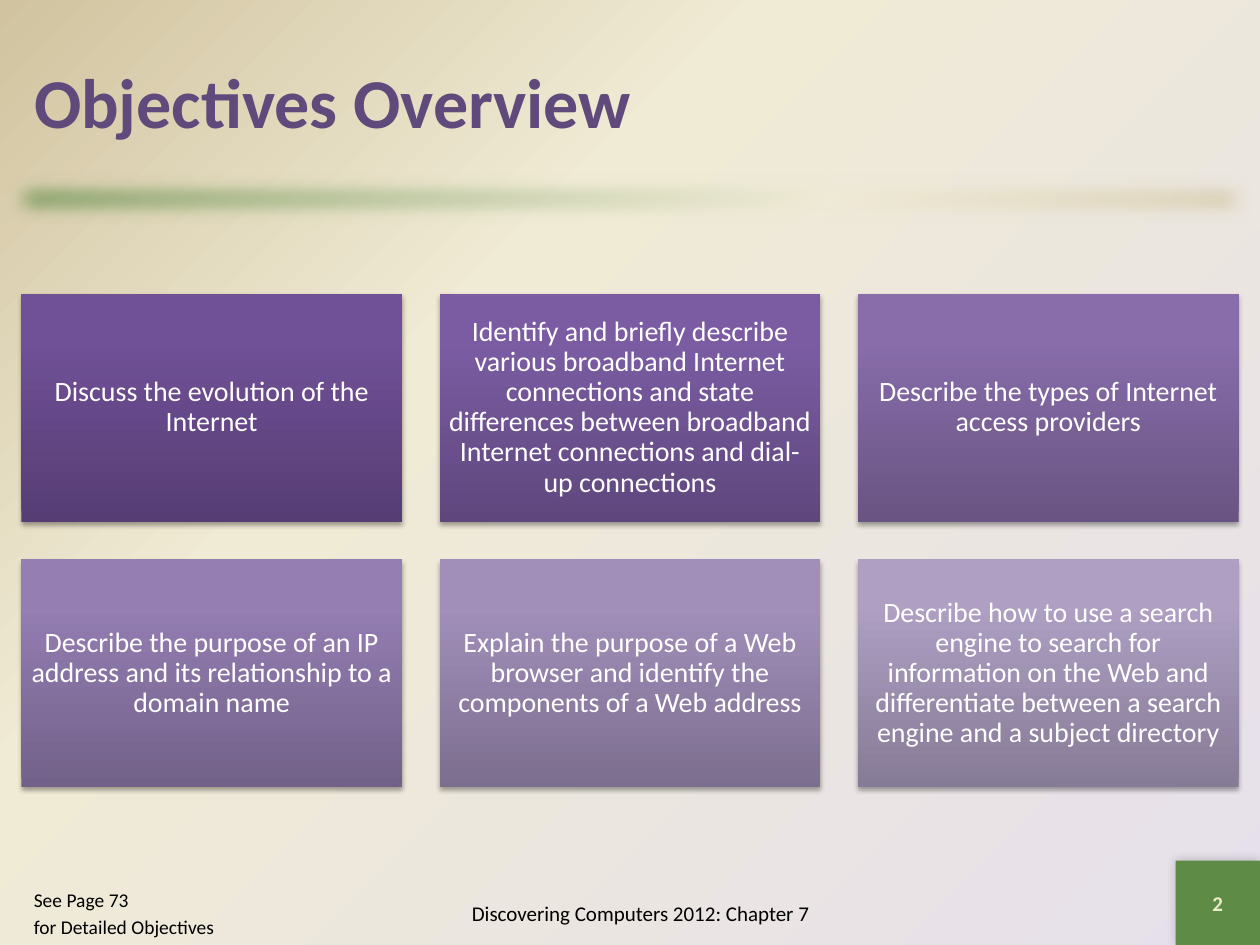
from lxml.etree import SubElement
from pptx import Presentation
from pptx.dml.color import RGBColor
from pptx.enum.shapes import MSO_SHAPE
from pptx.enum.text import MSO_ANCHOR, MSO_AUTO_SIZE, PP_ALIGN
from pptx.oxml.ns import qn
from pptx.util import Inches, Pt

# Content
TITLE = "Objectives Overview"
FOOTER = "Discovering Computers 2012: Chapter 7"
PAGE_NUMBER = "2"
REFERENCE = ["See Page 73", "for Detailed Objectives"]

# Objective text with its bottom, upper and top gradient colours
OBJECTIVES = [
    ("Discuss the evolution of the Internet", "563D74", "705097", "704F99"),
    ("Identify and briefly describe various broadband Internet connections and state "
     "differences between broadband Internet connections and dial-up connections",
     "5F477D", "7B5CA3", "7C5BA5"),
    ("Describe the types of Internet access providers", "695483", "886DAA", "886DAC"),
    ("Describe the purpose of an IP address and its relationship to a domain name",
     "726189", "947EB2", "957EB4"),
    ("Explain the purpose of a Web browser and identify the components of a Web address",
     "7C6E8F", "A18FBA", "A18FBC"),
    ("Describe how to use a search engine to search for information on the Web and "
     "differentiate between a search engine and a subject directory",
     "867B96", "AE9FC3", "AE9FC4"),
]

# Colours
PURPLE = RGBColor(0x60, 0x4A, 0x7B)
GREEN = RGBColor(0x5E, 0x8B, 0x46)
LAVENDER = RGBColor(0xE6, 0xE0, 0xEC)
CREAM = RGBColor(0xF0, 0xEB, 0xD5)
SAND = RGBColor(0xD1, 0xC3, 0x9F)
PALE = RGBColor(0xEE, 0xEB, 0xCA)
WHITE = RGBColor(0xFF, 0xFF, 0xFF)
BLACK = RGBColor(0, 0, 0)

# Grid, in inches
WIDTH, HEIGHT = 10, 7.5
MARGIN = 0.17
COLUMNS, GAP = 3, 0.3
TILE_TOP, TILE_HEIGHT = 2.33, 1.81
TILE_WIDTH = (WIDTH - 2 * MARGIN - (COLUMNS - 1) * GAP) / COLUMNS
BADGE = 0.67
FOOT_TOP, FOOT_HEIGHT = 7, 0.5


def set_gradient(fill, parent, stops, angle=None):
    """Fill with (percent, colour) stops; without an angle, spread from bottom right."""
    fill.gradient()
    gradient = parent.find(qn("a:gradFill"))
    for child in list(gradient):
        gradient.remove(child)
    stop_list = SubElement(gradient, qn("a:gsLst"))
    for percent, color in stops:
        stop = SubElement(stop_list, qn("a:gs"), pos=str(percent * 1000))
        SubElement(stop, qn("a:srgbClr"), val=str(color))
    if angle is None:
        path = SubElement(gradient, qn("a:path"), path="circle")
        SubElement(path, qn("a:fillToRect"), l="100000", t="100000")
    else:
        SubElement(gradient, qn("a:lin"), ang=str(angle * 60000), scaled="1")


def add_effect(shape, tag, **attributes):
    effects = shape._element.spPr.find(qn("a:effectLst"))
    return SubElement(effects, qn(tag), {k: str(v) for k, v in attributes.items()})


def add_shadow(shape, opacity, blur, distance, direction):
    shadow = add_effect(shape, "a:outerShdw", blurRad=Pt(blur), dist=Pt(distance),
                        dir=direction * 60000, rotWithShape=0)
    color = SubElement(shadow, qn("a:srgbClr"), val=str(BLACK))
    SubElement(color, qn("a:alpha"), val=str(opacity * 1000))


def add_box(slide, left, top, width, height):
    box = slide.shapes.add_shape(MSO_SHAPE.RECTANGLE, *map(Inches, (left, top, width, height)))
    box.line.fill.background()
    box.shadow.inherit = False
    return box


def write(shape, *lines, size=12, color=BLACK, bold=False, align=PP_ALIGN.CENTER,
          anchor=MSO_ANCHOR.MIDDLE, inset=None, line_spacing=None, gap=0):
    frame = shape.text_frame
    frame.word_wrap = True
    frame.auto_size = MSO_AUTO_SIZE.NONE
    frame.vertical_anchor = anchor
    if inset is not None:
        frame.margin_left = frame.margin_right = Inches(inset)
        frame.margin_top = frame.margin_bottom = Inches(inset)
    for index, line in enumerate(lines):
        paragraph = frame.add_paragraph() if index else frame.paragraphs[0]
        paragraph.alignment = align
        paragraph.line_spacing = line_spacing
        if index:
            paragraph.space_before = Pt(gap)
        run = paragraph.add_run()
        run.text = line
        run.font.name = "Calibri"
        run.font.size = Pt(size)
        run.font.bold = bold
        run.font.color.rgb = color


def add_text(slide, left, top, width, height, *lines, **style):
    box = slide.shapes.add_textbox(*map(Inches, (left, top, width, height)))
    write(box, *lines, **style)


def main():
    deck = Presentation()
    deck.slide_width, deck.slide_height = Inches(WIDTH), Inches(HEIGHT)
    slide = deck.slides.add_slide(deck.slide_layouts[5])

    # Background
    background_fill = slide.background.fill
    background_fill.solid()
    set_gradient(background_fill, slide._element.find(".//" + qn("p:bgPr")),
                 [(0, LAVENDER), (65, CREAM), (100, SAND)])

    # Title
    title = slide.shapes.title
    title.left, title.top = Inches(MARGIN), Inches(MARGIN)
    title.width, title.height = Inches(WIDTH - 2 * MARGIN), Inches(1.25)
    write(title, TITLE, size=40, color=PURPLE, bold=True, align=PP_ALIGN.LEFT)

    # Soft divider
    divider = add_box(slide, 0, 1.33, WIDTH, 0.5)
    set_gradient(divider.fill, divider._element.spPr,
                 [(0, GREEN), (65, CREAM), (100, SAND)], angle=45)
    add_effect(divider, "a:softEdge", rad=Pt(12.5))

    # Objective tiles
    for index, (objective, bottom, upper, top) in enumerate(OBJECTIVES):
        row, column = divmod(index, COLUMNS)
        tile = add_box(slide, MARGIN + column * (TILE_WIDTH + GAP),
                       TILE_TOP + row * (TILE_HEIGHT + GAP), TILE_WIDTH, TILE_HEIGHT)
        set_gradient(tile.fill, tile._element.spPr,
                     [(0, bottom), (80, upper), (100, top)], angle=270)
        add_shadow(tile, opacity=35, blur=3.1, distance=1.8, direction=90)
        write(tile, objective, size=16, color=WHITE, inset=0.07, line_spacing=0.9)

    # Footer, reference and page number
    add_text(slide, 3, FOOT_TOP, 4.17, FOOT_HEIGHT, FOOTER)
    add_text(slide, MARGIN, FOOT_TOP, 1.83, FOOT_HEIGHT, *REFERENCE, size=11.1,
             align=PP_ALIGN.LEFT, anchor=MSO_ANCHOR.TOP, gap=2.2)
    badge = add_box(slide, WIDTH - BADGE, HEIGHT - BADGE, BADGE, BADGE)
    badge.fill.solid()
    badge.fill.fore_color.rgb = GREEN
    add_shadow(badge, opacity=20, blur=6, distance=0, direction=225)
    write(badge, PAGE_NUMBER, color=PALE, bold=True)

    deck.save("out.pptx")


if __name__ == "__main__":
    main()
